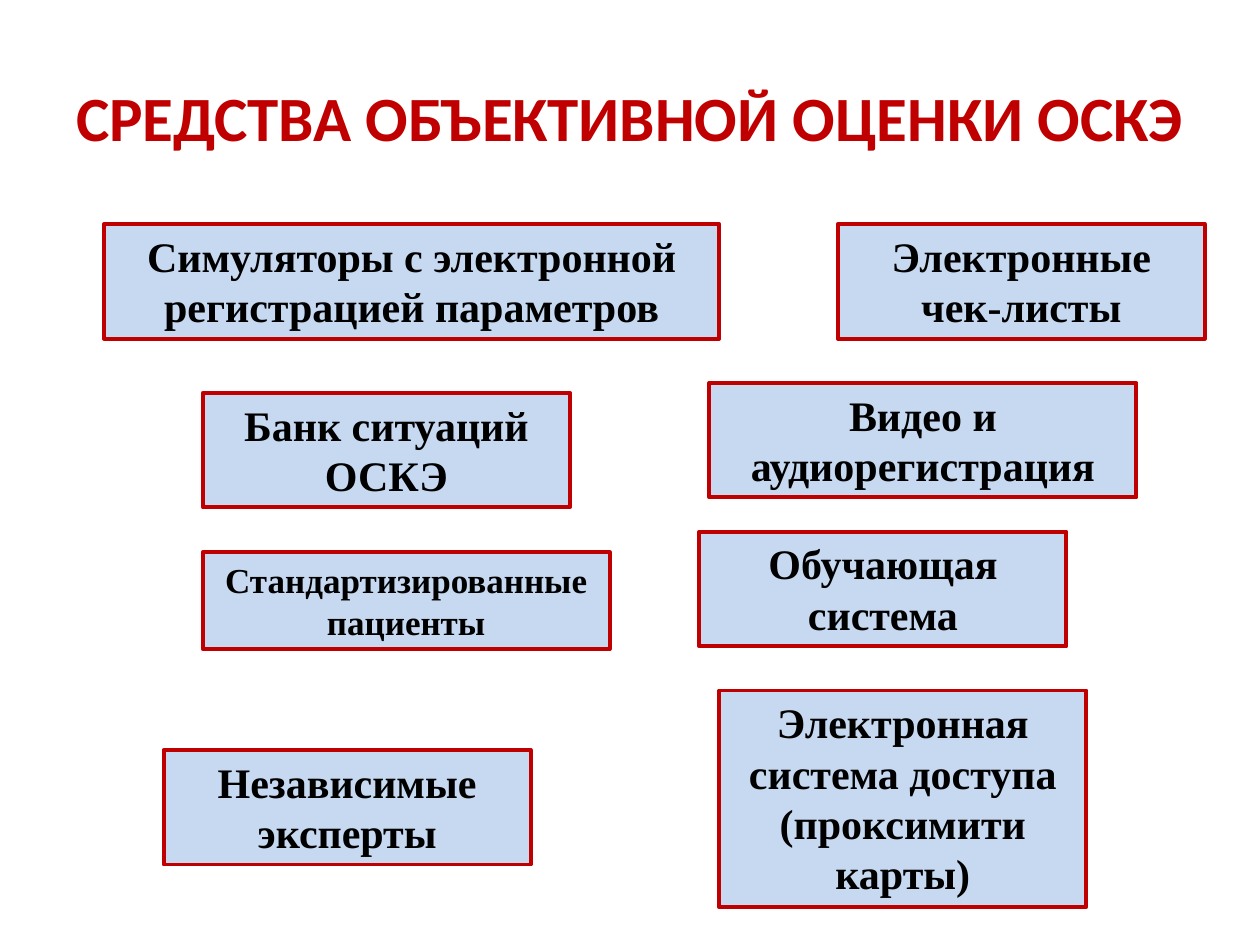
from pptx import Presentation
from pptx.dml.color import RGBColor
from pptx.enum.shapes import MSO_SHAPE
from pptx.enum.text import MSO_ANCHOR, MSO_AUTO_SIZE, PP_ALIGN
from pptx.util import Cm, Pt

RECT = MSO_SHAPE.RECTANGLE
TOP = MSO_ANCHOR.TOP
MIDDLE = MSO_ANCHOR.MIDDLE
GROW = MSO_AUTO_SIZE.SHAPE_TO_FIT_TEXT
CENTER = PP_ALIGN.CENTER

RED = "C00000"
BLUE = "C6D9F1"
BLACK = "000000"

WIDE = 7.4
TALL = 2.31
ROW = 4.52
LEFT = 4.09

TOOLS = [
    ("Банк ситуаций ОСКЭ", (LEFT, 7.92, WIDE, TALL), 24),
    ("Симуляторы с электронной регистрацией параметров",
     (2.1, ROW, 12.4, TALL), 24),
    ("Электронная система доступа (проксимити карты)",
     (14.5, 13.92, WIDE, 4.37), 24),
    ("Обучающая система", (14.1, 10.72, WIDE, TALL), 24),
    ("Видео и аудиорегистрация", (14.3, 7.72, 8.61, TALL), 24),
    ("Электронные чек-листы", (16.89, ROW, WIDE, TALL), 24),
    ("Стандартизированные пациенты", (LEFT, 11.13, 8.2, 1.96), 20),
    ("Независимые эксперты", (3.3, 15.12, WIDE, TALL), 24),
]


def color(code):
    return RGBColor.from_string(code)


def write(frame, text, font, size, ink, anchor):
    frame.word_wrap = True
    frame.vertical_anchor = anchor
    para = frame.paragraphs[0]
    para.alignment = CENTER
    run = para.add_run()
    run.text = text
    run.font.name = font
    run.font.size = Pt(size)
    run.font.bold = True
    run.font.color.rgb = color(ink)


def add_title(slide, text, box):
    frame = slide.shapes.add_textbox(*map(Cm, box)).text_frame
    frame.margin_left = frame.margin_right = Cm(0)
    write(frame, text, "Calibri", 36, RED, MIDDLE)


def add_tool(slide, text, box, size):
    shape = slide.shapes.add_shape(RECT, *map(Cm, box))
    shape.shadow.inherit = False
    shape.fill.solid()
    shape.fill.fore_color.rgb = color(BLUE)
    shape.line.color.rgb = color(RED)
    shape.line.width = Pt(2.25)
    write(shape.text_frame, text, "Times New Roman", size, BLACK, TOP)
    shape.text_frame.auto_size = GROW


def main():
    deck = Presentation()
    deck.slide_width = Cm(25.4)
    deck.slide_height = Cm(19.05)
    slide = deck.slides.add_slide(deck.slide_layouts[6])
    add_title(slide, "СРЕДСТВА ОБЪЕКТИВНОЙ ОЦЕНКИ ОСКЭ",
              (1.27, 0.76, 22.86, 3.18))
    for text, box, size in TOOLS:
        add_tool(slide, text, box, size)
    deck.save("out.pptx")


if __name__ == "__main__":
    main()
